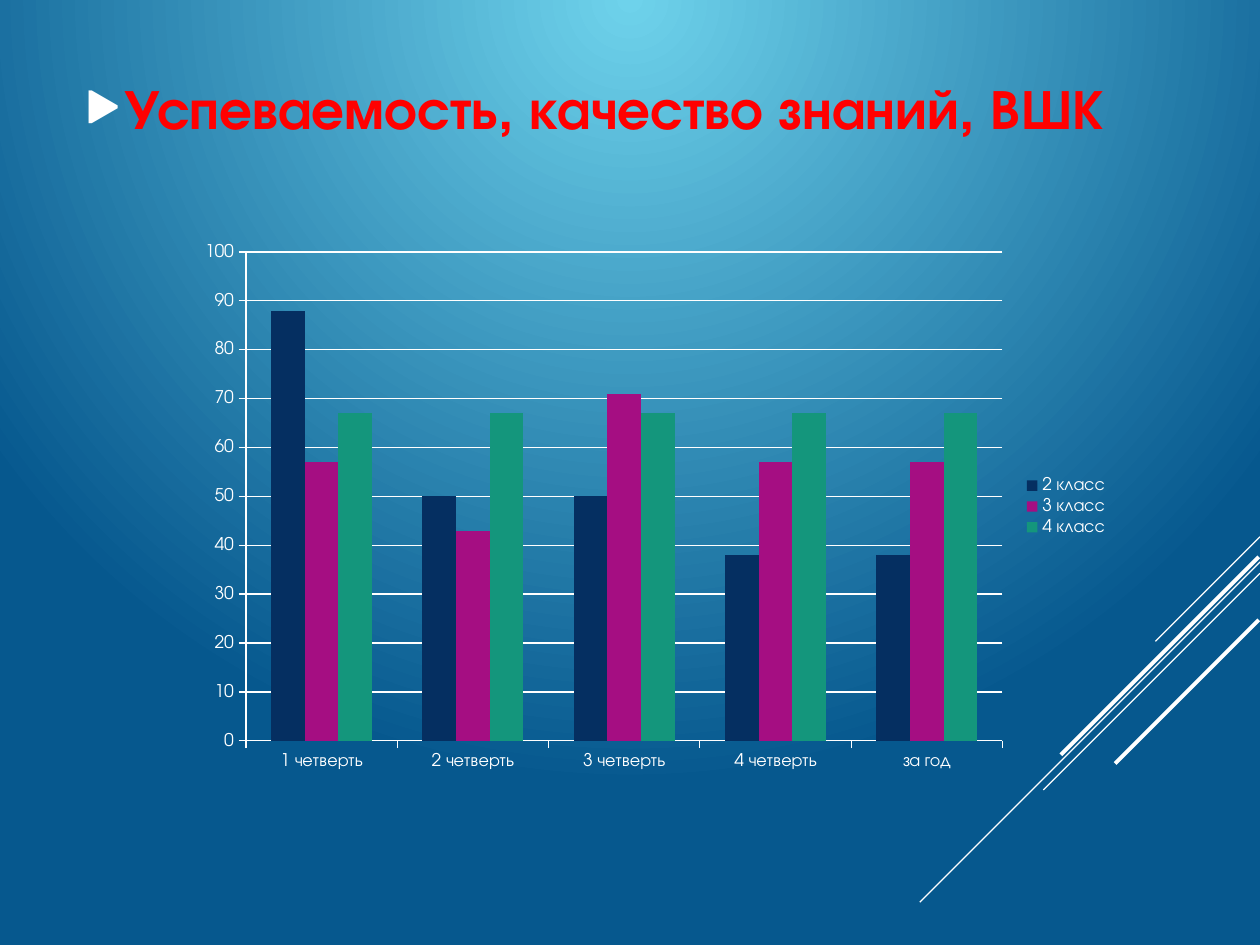
from lxml.etree import SubElement
from pptx import Presentation
from pptx.chart.data import CategoryChartData
from pptx.dml.color import RGBColor
from pptx.enum.chart import XL_CHART_TYPE, XL_LEGEND_POSITION, XL_TICK_MARK
from pptx.enum.shapes import MSO_CONNECTOR
from pptx.enum.text import MSO_ANCHOR
from pptx.oxml.ns import qn
from pptx.util import Inches, Pt

FONT = "TeX Gyre Adventor"
COLORS = {
    "glow": "6ED2EB", "deep": "06588E", "white": "FFFFFF", "title": "FF0000",
    "navy": "052F61", "plum": "A50E82", "green": "14967C",
}
TERMS = ["1 четверть", "2 четверть", "3 четверть", "4 четверть", "за год"]
GRADES = [
    ("2 класс", [88, 50, 50, 38, 38], "navy"),
    ("3 класс", [57, 43, 71, 57, 57], "plum"),
    ("4 класс", [67, 67, 67, 67, 67], "green"),
]


def color(name):
    return RGBColor.from_string(COLORS[name])


def apply(item, values):
    for key, value in values.items():
        setattr(item, key, value)


def add_xml(parent, tag, **values):
    return SubElement(parent, qn(tag), {k: str(v) for k, v in values.items()})


def style_font(font, size, tint, bold=False):
    apply(font, {"name": FONT, "size": Pt(size), "bold": bold})
    font.color.rgb = color(tint)


def style_line(line, width):
    line.color.rgb = color("white")
    line.width = Pt(width)


def fill_back(slide):
    """Radial glow from the top centre."""
    fill = slide.background.fill
    fill.gradient()
    for stop, name in zip(fill.gradient_stops, ("glow", "deep")):
        stop.color.rgb = color(name)
    grad = slide._element.find(".//" + qn("a:gradFill"))
    grad.remove(grad.find(qn("a:lin")))
    ring = add_xml(grad, "a:path", path="circle")
    add_xml(ring, "a:fillToRect", l=0, t=0, r=0, b=100000)


def add_rays(slide, left, top, width):
    """Diagonal rays: drop of the right end, its inset, run, line width."""
    rays = [(0, 0, 0.83, 0.75), (0.2, 0, 2.7, 0.75), (0.29, 0, 1.72, 0.75),
            (0.16, 0.01, 1.57, 2.25), (0.66, 0.01, 1.14, 2.25)]
    for drop, inset, run, weight in rays:
        x, y = left + width - inset, top + drop
        ray = slide.shapes.add_connector(
            MSO_CONNECTOR.STRAIGHT, Inches(x), Inches(y),
            Inches(x - run), Inches(y + run))
        style_line(ray.line, weight)
        add_xml(ray._element.spPr, "a:effectLst")


def add_title(slide, left, top, width, height):
    """Bulleted heading."""
    box = slide.shapes.add_textbox(*map(Inches, (left, top, width, height)))
    frame = box.text_frame
    apply(frame, {"word_wrap": True, "vertical_anchor": MSO_ANCHOR.TOP,
                  "margin_top": 0, "margin_left": Inches(0.1)})
    para = frame.paragraphs[0]
    run = para.add_run()
    run.text = "Успеваемость, качество знаний, ВШК"
    style_font(run.font, 32, "title", True)
    # Hanging indent and arrow bullet
    props = para._p.get_or_add_pPr()
    props.set("marL", str(Inches(0.31)))
    props.set("indent", str(Inches(-0.31)))
    tint = add_xml(props, "a:buClr")
    add_xml(tint, "a:srgbClr", val=COLORS["white"])
    add_xml(props, "a:buSzPct", val=80000)
    add_xml(props, "a:buFont", typeface=FONT)
    add_xml(props, "a:buChar", char="▶")


def add_bars(slide, left, top, width, height):
    """Clustered columns by term and grade."""
    data = CategoryChartData()
    data.categories = TERMS
    for name, values, _ in GRADES:
        data.add_series(name, values)
    chart = slide.shapes.add_chart(
        XL_CHART_TYPE.COLUMN_CLUSTERED,
        *map(Inches, (left, top, width, height)), data).chart
    apply(chart, {"has_title": False, "has_legend": True})
    style_font(chart.font, 10, "white")
    apply(chart.legend, {"position": XL_LEGEND_POSITION.RIGHT,
                         "include_in_layout": False})
    plot = chart.plots[0]
    apply(plot, {"gap_width": 150, "overlap": 0, "vary_by_categories": False})
    for bars, (_, _, tint) in zip(plot.series, GRADES):
        bars.format.fill.solid()
        bars.format.fill.fore_color.rgb = color(tint)
    # Axes and grid
    for axis in (chart.category_axis, chart.value_axis):
        axis.major_tick_mark = XL_TICK_MARK.OUTSIDE
        style_line(axis.format.line, 0.75)
    scale = chart.value_axis
    apply(scale, {"minimum_scale": 0, "maximum_scale": 100, "major_unit": 10,
                  "has_major_gridlines": True})
    style_line(scale.major_gridlines.format.line, 0.75)


def main():
    deck = Presentation()
    apply(deck, {"slide_width": Inches(10), "slide_height": Inches(7.5)})
    slide = deck.slides.add_slide(deck.slide_layouts[6])
    fill_back(slide)
    add_rays(slide, 7.3, 4.26, 2.7)
    add_title(slide, 0.58, 0.58, 9.1, 1.04)
    add_bars(slide, 1.48, 1.85, 7.42, 4.34)
    deck.save("out.pptx")


if __name__ == "__main__":
    main()
